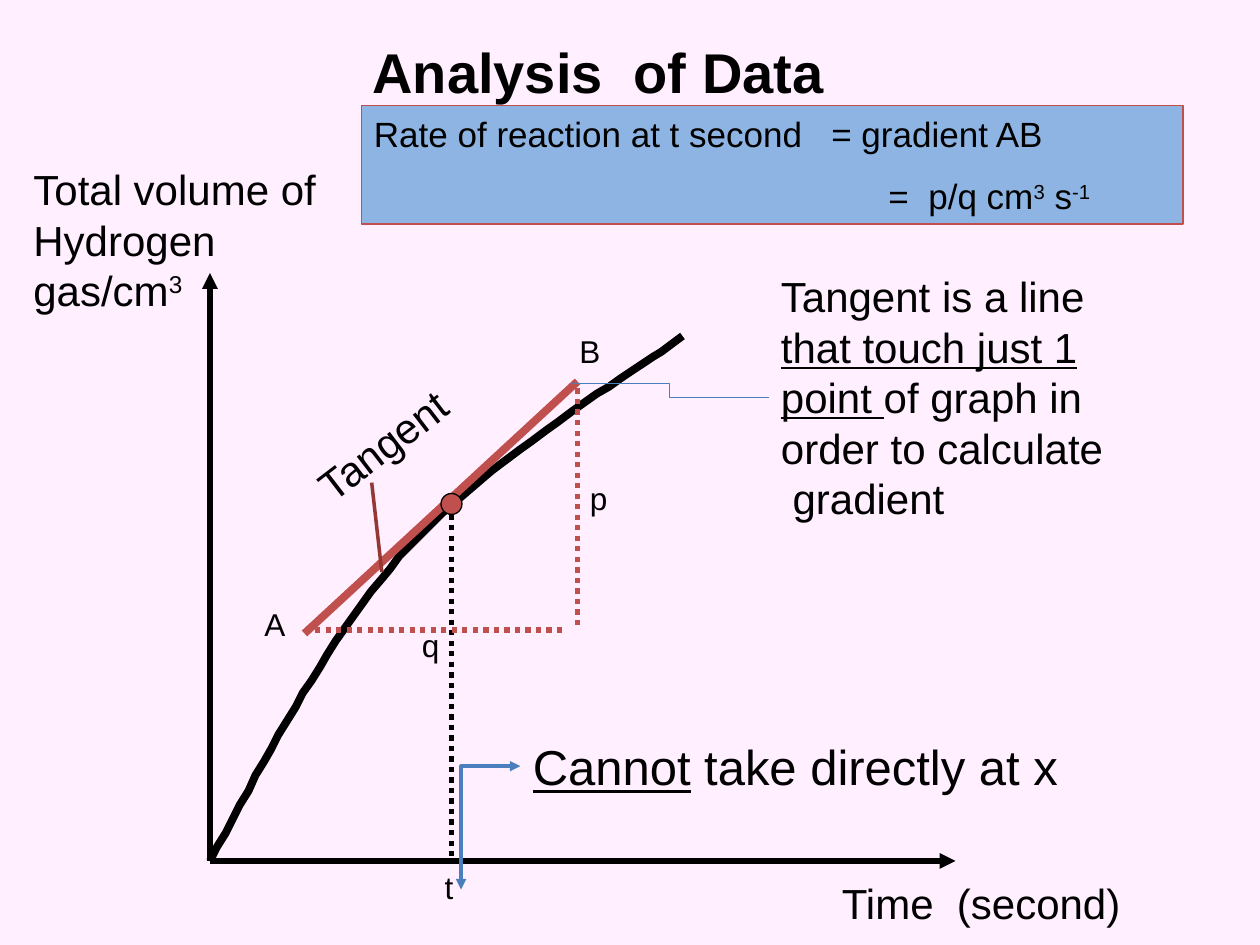
"""Build the slide on finding a rate of reaction from a tangent."""
from lxml import etree
from pptx import Presentation
from pptx.dml.color import RGBColor
from pptx.enum.dml import MSO_LINE
from pptx.enum.shapes import MSO_CONNECTOR, MSO_SHAPE
from pptx.enum.text import PP_ALIGN
from pptx.oxml.ns import qn
from pptx.util import Pt

STRAIGHT, ELBOW = MSO_CONNECTOR.STRAIGHT, MSO_CONNECTOR.ELBOW
RECT, OVAL = MSO_SHAPE.RECTANGLE, MSO_SHAPE.OVAL
DOTS = MSO_LINE.ROUND_DOT
LEFT, CENTER = PP_ALIGN.LEFT, PP_ALIGN.CENTER
BLACK, RED, DARK_RED, BLUE = "000000", "C0504D", "953735", "4B7EBC"
rgb = RGBColor.from_string


def add_line(kind, ends, color, width, dash=None, arrows=()):
    sp = s.shapes.add_connector(kind, *[Pt(v) for v in ends])
    sp.line.color.rgb = rgb(color)
    sp.line.width = Pt(width)
    if dash:
        sp.line.dash_style = dash
    for arrow in arrows:
        etree.SubElement(sp.line._get_or_add_ln(), qn("a:" + arrow), type="triangle")
    etree.SubElement(sp._element.spPr, qn("a:effectLst"))
    return sp


def write(p, runs, size, align=LEFT, bold=False):
    p.alignment = align
    p.font.name, p.font.size, p.font.bold = "Arial", Pt(size), bold
    p.font.color.rgb = rgb(BLACK)
    for text, style in runs:
        r = p.add_run()
        r.text = text
        if style == "underline":
            r.font.underline = True
        elif style == "super":
            r.font._element.set("baseline", "30000")


prs = Presentation()
prs.slide_width, prs.slide_height = Pt(720), Pt(540)
s = prs.slides.add_slide(prs.slide_layouts[6])
s.background.fill.solid()
s.background.fill.fore_color.rgb = rgb("FFEFFF")

origin = (120, 492)
for tip in [(120, 156), (546, 492)]:
    add_line(STRAIGHT, origin + tip, BLACK, 3, arrows=["tailEnd"])

curves = [
    [origin, (154.8, 427), (189, 362), (234, 312)],
    [(234, 312), (279.4, 262), (364.3, 211.7), (390, 192)],
]
steps = 24
points = []
for curve in curves:
    for i in range(1, steps + 1):
        t = i / steps
        weights = ((1 - t) ** 3, 3 * t * (1 - t) ** 2, 3 * t * t * (1 - t), t ** 3)
        points.append([sum(w * c[axis] for w, c in zip(weights, curve)) for axis in (0, 1)])
builder = s.shapes.build_freeform(*origin, scale=Pt(1))
builder.add_line_segments(points, close=False)
sp = builder.convert_to_shape()
sp.shadow.inherit = False
sp.fill.background()
sp.line.color.rgb = rgb(BLACK)
sp.line.width = Pt(4.5)

add_line(STRAIGHT, (258, 288, 258, 492), BLACK, 3, DOTS)
add_line(STRAIGHT, (174, 362, 330, 218), RED, 4.5)
add_line(STRAIGHT, (180, 360, 324, 360), RED, 3, DOTS)
add_line(STRAIGHT, (330, 222, 330, 360), RED, 3, DOTS)

for shape, box, fill, outline in [
    (RECT, (206.6, 60.3, 469.4, 67.8), "8EB4E3", RED),
    (OVAL, (252, 282, 12, 12), RED, BLACK),
]:
    sp = s.shapes.add_shape(shape, *[Pt(v) for v in box])
    sp.shadow.inherit = False
    sp.fill.solid()
    sp.fill.fore_color.rgb = rgb(fill)
    sp.line.color.rgb = rgb(outline)
    sp.line.width = Pt(0.75)
    if shape == RECT:
        tf = sp.text_frame
        write(tf.paragraphs[0], [("Rate of reaction at t second   = gradient AB", "")], 20)
        p = tf.add_paragraph()
        write(p, [("=  p/q cm", ""), ("3", "super"), (" s", ""), ("-1", "super")], 20)
        p.space_before = Pt(11.5)
        p._p.get_or_add_pPr().set("marL", str(Pt(294)))

labels = [
    ((12, 90, 192, 94), 24, [("Total volume of Hydrogen gas/cm", ""), ("3", "super")]),
    ((474, 498, 180, 36.4), 24, [("Time  (second)", "")]),
    ((36, 18, 612, 46), 32, [("Analysis  of Data", "")]),
    ((247, 492.6, 60, 36), 18, [("t", "")]),
    ((330, 270, 54, 36), 18, [("p", "")]),
    ((234, 354, 30, 36), 18, [("q", "")]),
    ((144, 342, 48, 36), 18, [("A", "")]),
    ((324, 186, 48, 36), 18, [("B", "")]),
    ((167, 230.4, 118.8, 36.4), 24, [("Tangent", "")]),
    ((297.4, 417.6, 334.8, 41), 28, [("Cannot", "underline"), (" take directly at x", "")]),
    ((439.2, 151.2, 204.5, 152.6), 24, [
        ("Tangent is a line ", ""),
        ("that touch just 1 point ", "underline"),
        ("of graph in order to calculate  gradient", ""),
    ]),
]
for box, size, runs in labels:
    sp = s.shapes.add_textbox(*[Pt(v) for v in box])
    tf = sp.text_frame
    tf.word_wrap = True
    title = size == 32
    write(tf.paragraphs[0], runs, size, CENTER if title else LEFT, title)
    if runs[0][0] == "Tangent":
        sp.rotation = 322.5

add_line(STRAIGHT, (218.2, 326.9, 212.4, 275.8), DARK_RED, 2)
sp = add_line(ELBOW, (297.4, 437.8, 263.5, 508.3), BLUE, 2, arrows=["headEnd", "tailEnd"])
sp._element.spPr.find(qn("a:prstGeom")).set("prst", "bentConnector2")
add_line(ELBOW, (439.2, 227.2, 326.2, 219), BLUE, 0.75)

prs.save("out.pptx")
